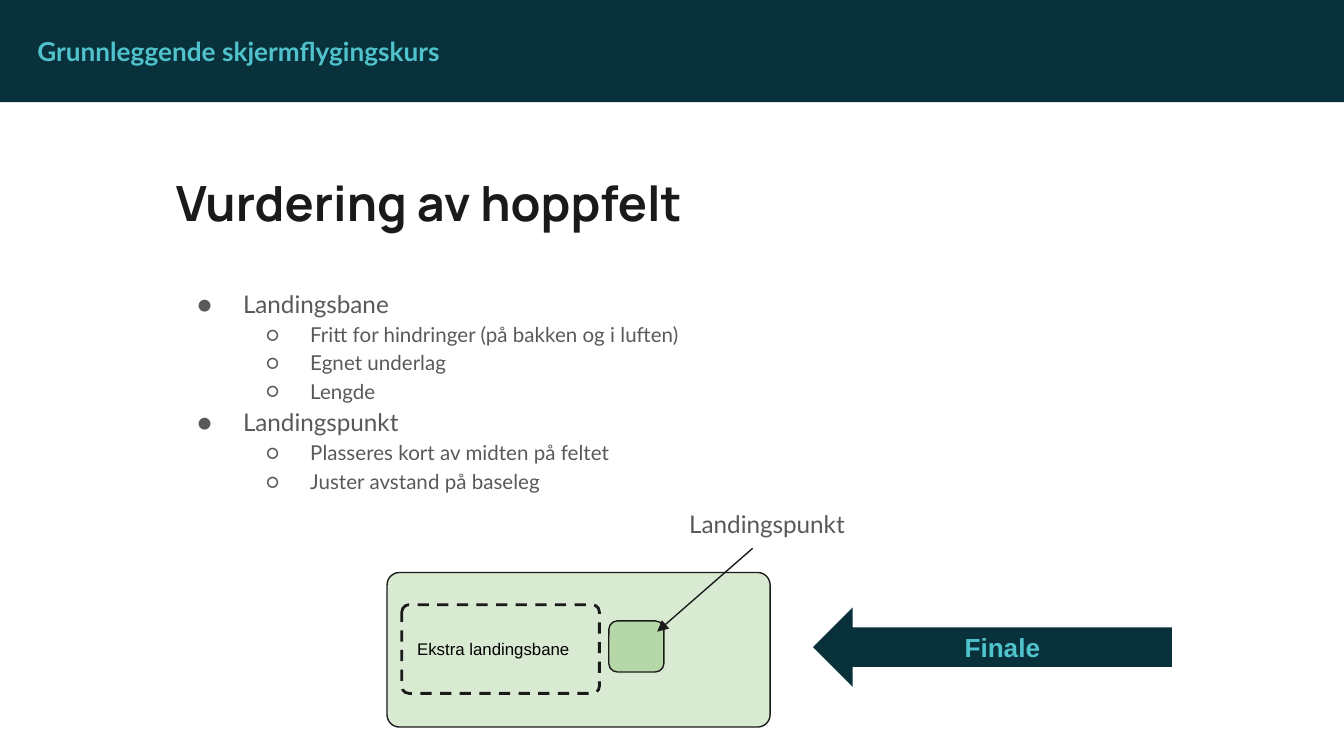
import dataclasses

import lxml.etree
import pptx
import pptx.dml.color
import pptx.enum.dml
import pptx.enum.shapes
import pptx.enum.text
import pptx.oxml.ns
import pptx.util

Inches = pptx.util.Inches
Shape = pptx.enum.shapes.MSO_SHAPE
Anchor = pptx.enum.text.MSO_ANCHOR
Align = pptx.enum.text.PP_ALIGN


@dataclasses.dataclass(frozen=True)
class Theme:
    navy: str = "08313B"
    teal: str = "50C2CC"
    ink: str = "1A1A1A"
    gray: str = "595959"
    black: str = "000000"
    field: str = "D9EAD3"
    spot: str = "B6D7A8"
    thin: float = 0.75
    thick: float = 1.5
    space: float = 1.15

    def style(self, name):
        """Return the font values and colour of a named text style."""
        face, size, bold, color = {
            "brand": ("Lato", 14, True, self.teal),
            "title": ("Manrope", 26, True, self.ink),
            "body": ("Lato", 13, False, self.gray),
            "sub": ("Lato", 11, False, self.gray),
            "arrow": ("Arial", 14, True, self.teal),
            "note": ("Arial", 9, False, self.black),
        }[name]
        return {"name": face, "size": pptx.util.Pt(size), "bold": bold}, color


THEME = Theme()
POINTS = [
    ("Landingsbane", ["Fritt for hindringer (på bakken og i luften)",
                      "Egnet underlag", "Lengde"]),
    ("Landingspunkt", ["Plasseres kort av midten på feltet",
                       "Juster avstand på baseleg"]),
]


def rgb(code):
    return pptx.dml.color.RGBColor.from_string(code)


def lengths(box):
    return [Inches(value) for value in box]


def add(parent, tag, **attrs):
    """Append a DrawingML element to a parent."""
    return lxml.etree.SubElement(parent, pptx.oxml.ns.qn(tag), attrs)


def write(para, text, style):
    run = para.add_run()
    run.text = text
    values, color = THEME.style(style)
    for key, value in values.items():
        setattr(run.font, key, value)
    run.font.color.rgb = rgb(color)


def setup(frame, anchor=Anchor.TOP):
    """Set wrapping, anchor and even margins; return the first paragraph."""
    values = {"word_wrap": True, "vertical_anchor": anchor}
    for side in ("left", "top", "right", "bottom"):
        values[f"margin_{side}"] = Inches(0.1)
    for key, value in values.items():
        setattr(frame, key, value)
    return frame.paragraphs[0]


def label(slide, box, text, style):
    """Add a one-line text box and return its paragraph."""
    frame = slide.shapes.add_textbox(*lengths(box)).text_frame
    para = setup(frame)
    write(para, text, style)
    return para


def block(slide, kind, box, fill=None, line=None, width=THEME.thin):
    shape = slide.shapes.add_shape(kind, *lengths(box))
    shape.shadow.inherit = False
    if fill:
        shape.fill.solid()
        shape.fill.fore_color.rgb = rgb(fill)
    else:
        shape.fill.background()
    if line:
        shape.line.color.rgb = rgb(line)
        shape.line.width = pptx.util.Pt(width)
    else:
        shape.line.fill.background()
    return shape


def header(slide, box):
    x, y, w, h = box
    block(slide, Shape.RECTANGLE, box, THEME.navy)
    label(slide, (x + 0.18, y + 0.16, 3.26, 0.44),
          "Grunnleggende skjermflygingskurs", "brand")


def bullet(para, text, level):
    indent, hang, mark, style = [(0.5, 0.34, "●", "body"),
                                 (1, 0.33, "○", "sub")][level]
    props = para._p.get_or_add_pPr()
    props.set("marL", str(Inches(indent)))
    props.set("indent", str(-Inches(hang)))
    add(add(props, "a:buClr"), "a:srgbClr", val=THEME.gray)
    add(props, "a:buFont", typeface="Lato")
    add(props, "a:buChar", char=mark)
    para.level = level
    para.line_spacing = THEME.space
    write(para, text, style)


def outline(slide, box):
    frame = slide.shapes.add_textbox(*lengths(box)).text_frame
    para = setup(frame)
    rows = [row for head, subs in POINTS
            for row in [(head, 0)] + [(sub, 1) for sub in subs]]
    for index, (text, level) in enumerate(rows):
        bullet(para if index == 0 else frame.add_paragraph(), text, level)


def pointer(slide, start, end):
    """Draw a thin line with an arrowhead at its end."""
    line = slide.shapes.add_connector(
        pptx.enum.shapes.MSO_CONNECTOR.STRAIGHT, *lengths(start + end))
    line.line.color.rgb = rgb(THEME.ink)
    line.line.width = pptx.util.Pt(THEME.thin)
    add(line.line._get_or_add_ln(), "a:tailEnd", type="triangle")
    add(line._element.spPr, "a:effectLst")


def diagram(slide, box):
    """Draw the landing field, its target and the final approach."""
    x, y, w, h = box
    field = block(slide, Shape.ROUNDED_RECTANGLE, (x, y + 0.6, 2.85, 1.15),
                  THEME.field, THEME.ink)
    field.adjustments[0] = 0.08
    block(slide, Shape.FLOWCHART_ALTERNATE_PROCESS,
          (x + 1.65, y + 0.96, 0.41, 0.38), THEME.spot, THEME.ink)

    final = block(slide, Shape.LEFT_ARROW, (x + w - 2.67, y + 0.86, 2.67, 0.59),
                  THEME.navy)
    para = setup(final.text_frame, Anchor.MIDDLE)
    para.alignment = Align.CENTER
    write(para, "Finale", "arrow")

    para = label(slide, (x + 2.15, y, 1.71, 0.68), "Landingspunkt", "body")
    para.line_spacing = THEME.space
    para.space_after = pptx.util.Pt(16)
    pointer(slide, (x + 2.72, y + 0.42), (x + 2.01, y + 1.04))

    extra = block(slide, Shape.ROUNDED_RECTANGLE, (x + 0.11, y + 0.84, 1.47, 0.66),
                  line=THEME.ink, width=THEME.thick)
    extra.adjustments[0] = 0.08
    extra.line.dash_style = pptx.enum.dml.MSO_LINE.DASH
    para = setup(extra.text_frame, Anchor.MIDDLE)
    para.alignment = Align.LEFT
    write(para, "Ekstra landingsbane", "note")


def main():
    deck = pptx.Presentation()
    deck.slide_width = Inches(10)
    deck.slide_height = deck.slide_width * 9 // 16
    slide = deck.slides.add_slide(deck.slide_layouts[6])
    header(slide, (0, 0, 10, 0.76))
    label(slide, (1.21, 1.19, 8.41, 0.59), "Vurdering av hoppfelt", "title")
    outline(slide, (1.21, 2.02, 8.41, 3.3))
    diagram(slide, (2.88, 3.66, 5.84, 1.75))
    deck.save("out.pptx")


if __name__ == "__main__":
    main()
